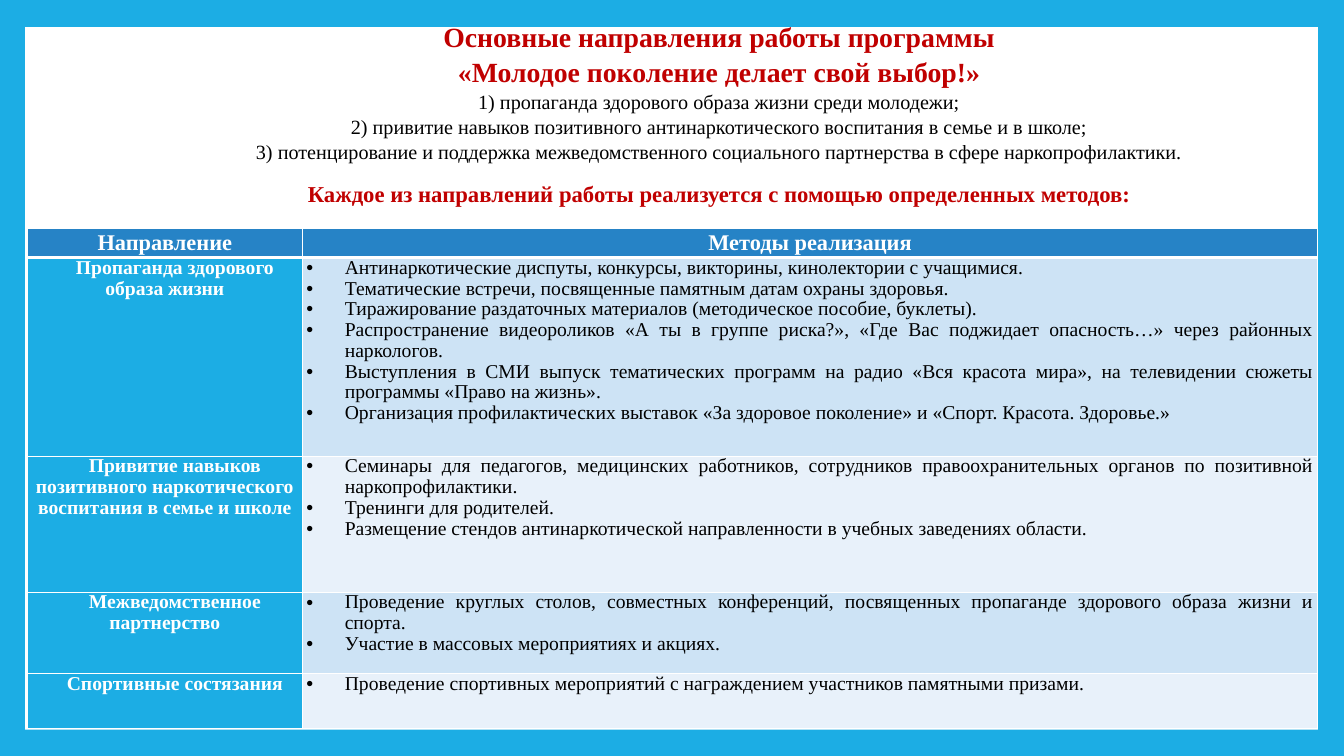
from lxml import etree
from pptx import Presentation
from pptx import util as u
from pptx.dml.color import RGBColor
from pptx.enum import shapes, text
from pptx.oxml import ns

WHITE, BLACK, RED = "FFFFFF", "000000", "C00000"
SKY, HEADER_BLUE = "1CADE4", "2683C6"
BANDS = ("CDE3F5", "E8F1FA")
CENTER, JUSTIFY = text.PP_ALIGN.CENTER, text.PP_ALIGN.JUSTIFY


def rgb(value):
    return RGBColor.from_string(value)


class SlideBuilder:
    font = "Times New Roman"

    def __init__(self, slide):
        self.slide = slide

    def background(self, color):
        fill = self.slide.background.fill
        fill.solid()
        fill.fore_color.rgb = rgb(color)

    def panel(self, left, top, width, height, color):
        panel = self.slide.shapes.add_shape(
            shapes.MSO_SHAPE.RECTANGLE, *map(u.Inches, (left, top, width, height)))
        panel.shadow.inherit = False
        panel.fill.solid()
        panel.fill.fore_color.rgb = rgb(color)
        panel.line.fill.background()

    def paragraph(self, frame, index, words, size, color, bold=False, align=CENTER,
                  spacing=1.0, before=0, margin=0, indent=0, bullet=None):
        para = frame.paragraphs[0] if index == 0 else frame.add_paragraph()
        para.alignment = align
        para.line_spacing = spacing
        para.space_before = u.Pt(before)
        run = para.add_run()
        run.text = words
        run.font.name = self.font
        run.font.size = u.Pt(size)
        run.font.bold = bold
        run.font.color.rgb = rgb(color)
        props = para._p.get_or_add_pPr()
        props.set("marL", str(u.Inches(margin)))
        props.set("indent", str(u.Inches(indent)))
        if bullet:
            etree.SubElement(props, ns.qn("a:buFont"), typeface="Arial")
            etree.SubElement(props, ns.qn("a:buChar"), char=bullet)

    def text_box(self, left, top, width, height, lines):
        box = self.slide.shapes.add_textbox(*map(u.Inches, (left, top, width, height)))
        frame = box.text_frame
        frame.word_wrap = True
        frame.vertical_anchor = text.MSO_ANCHOR.MIDDLE
        for index, (words, style) in enumerate(lines):
            self.paragraph(frame, index, words, **style)

    def table(self, left, top, widths, heights):
        frame = self.slide.shapes.add_table(
            len(heights), len(widths), u.Inches(left), u.Inches(top),
            u.Inches(sum(widths)), u.Inches(sum(heights)))
        table = frame.table
        table.horz_banding = False
        for column, width in zip(table.columns, widths):
            column.width = u.Inches(width)
        for row, height in zip(table.rows, heights):
            row.height = u.Inches(height)
        return table

    def cell(self, cell, fill, lines, style, top_line=1, bottom_line=1):
        cell.margin_left = cell.margin_right = u.Inches(0.04)
        cell.margin_top = cell.margin_bottom = 0
        props = cell._tc.get_or_add_tcPr()
        for side, width in (("L", 1), ("R", 1), ("T", top_line), ("B", bottom_line)):
            border = etree.SubElement(props, ns.qn(f"a:ln{side}"), w=str(u.Pt(width)))
            solid = etree.SubElement(border, ns.qn("a:solidFill"))
            etree.SubElement(solid, ns.qn("a:srgbClr"), val=WHITE)
        cell.fill.solid()
        cell.fill.fore_color.rgb = rgb(fill)
        for index, words in enumerate(lines):
            self.paragraph(cell.text_frame, index, words, **style)


HEADINGS = ("Направление", "Методы реализация")
DIRECTIONS = [
    ("Пропаганда здорового образа жизни", 1.97, [
        "Антинаркотические диспуты, конкурсы, викторины, кинолектории с учащимися.",
        "Тематические встречи, посвященные памятным датам охраны здоровья.",
        "Тиражирование раздаточных материалов (методическое пособие, буклеты).",
        "Распространение видеороликов «А ты в группе риска?», «Где Вас поджидает "
        "опасность…» через районных наркологов.",
        "Выступления в СМИ выпуск тематических программ на радио «Вся красота мира», "
        "на телевидении сюжеты программы «Право на жизнь».",
        "Организация профилактических выставок «За здоровое поколение» и "
        "«Спорт. Красота. Здоровье.»",
    ]),
    ("Привитие навыков позитивного наркотического воспитания в семье и школе", 1.35, [
        "Семинары для педагогов, медицинских работников, сотрудников "
        "правоохранительных органов по позитивной наркопрофилактики.",
        "Тренинги для родителей.",
        "Размещение стендов антинаркотической направленности в учебных заведениях области.",
    ]),
    ("Межведомственное партнерство", 0.81, [
        "Проведение круглых столов, совместных конференций, посвященных пропаганде "
        "здорового образа жизни и спорта.",
        "Участие в массовых мероприятиях и акциях.",
    ]),
    ("Спортивные состязания", 0.54, [
        "Проведение спортивных мероприятий с награждением участников памятными призами.",
    ]),
]


def main():
    deck = Presentation()
    deck.slide_width, deck.slide_height = u.Inches(13.33), u.Inches(7.5)
    page = SlideBuilder(deck.slides.add_slide(deck.slide_layouts[6]))

    # Blue frame with a white panel
    page.background(SKY)
    page.panel(0.25, 0.27, 12.82, 6.97, WHITE)

    # Title, goals and lead-in to the table
    title = dict(size=19.8, color=RED, bold=True, spacing=1.04)
    goal = dict(size=14.4, color=BLACK, spacing=1.04)
    lead_in = dict(size=16.2, color=RED, bold=True, spacing=1.04, before=11)
    page.text_box(2.08, 0.91, 10.1, 0.42, [
        ("Основные направления работы программы", title),
        ("«Молодое поколение делает свой выбор!»", title),
        ("1) пропаганда здорового образа жизни среди молодежи;", goal),
        ("2) привитие навыков позитивного антинаркотического воспитания "
         "в семье и в школе;", goal),
        ("3) потенцирование и поддержка межведомственного социального партнерства "
         "в сфере наркопрофилактики.", goal),
        ("Каждое из направлений работы реализуется с помощью определенных методов:",
         lead_in),
    ])

    # Table of directions and methods
    heading = dict(size=16, color=WHITE, bold=True, spacing=1.07)
    label = dict(size=14, color=WHITE, bold=True, spacing=0.96, indent=0.2)
    method = dict(size=14, color=BLACK, align=JUSTIFY, spacing=0.96,
                  margin=0.38, indent=-0.38, bullet="•")
    heights = [0.27] + [height for _, height, _ in DIRECTIONS]
    plan = page.table(0.27, 2.27, (2.73, 10.07), heights)
    for column, words in enumerate(HEADINGS):
        page.cell(plan.cell(0, column), HEADER_BLUE, [words], heading, bottom_line=3)
    for row, (direction, _, methods) in enumerate(DIRECTIONS, start=1):
        top_line = 3 if row == 1 else 1
        page.cell(plan.cell(row, 0), SKY, [direction], label, top_line)
        page.cell(plan.cell(row, 1), BANDS[(row - 1) % 2], methods, method, top_line)

    deck.save("out.pptx")


if __name__ == "__main__":
    main()
